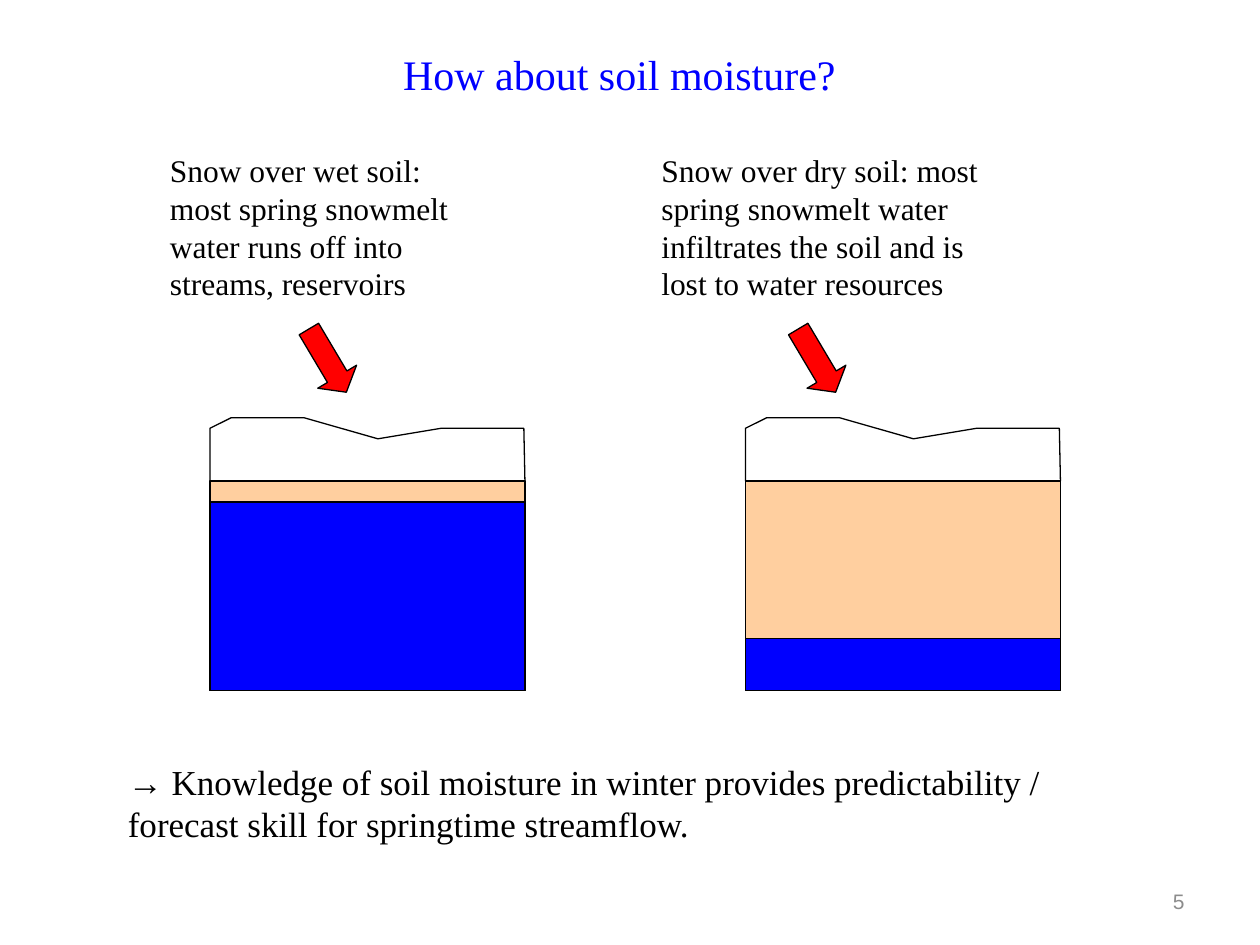
from pptx import Presentation
from pptx.dml.color import RGBColor
from pptx.enum.shapes import MSO_SHAPE
from pptx.enum.text import MSO_ANCHOR, PP_ALIGN
from pptx.util import Inches, Pt

BLACK = RGBColor(0x00, 0x00, 0x00)
WHITE = RGBColor(0xFF, 0xFF, 0xFF)
BLUE = RGBColor(0x00, 0x00, 0xFF)
RED = RGBColor(0xFF, 0x00, 0x00)
SAND = RGBColor(0xFF, 0xCF, 0x9F)
GRAY = RGBColor(0x8C, 0x8C, 0x8C)
RECTANGLE = MSO_SHAPE.RECTANGLE
RIGHT_ARROW = MSO_SHAPE.RIGHT_ARROW
LEFT, CENTER, RIGHT = PP_ALIGN.LEFT, PP_ALIGN.CENTER, PP_ALIGN.RIGHT
TOP, MIDDLE = MSO_ANCHOR.TOP, MSO_ANCHOR.MIDDLE

COLUMNS, ROWS = 120, 90
SOIL_TOP, SOIL_WIDTH, SOIL_HEIGHT = 45.8, 30, 20
SNOW_OUTLINE = [(0, 0), (30, 0), (29.9, -5), (22, -5), (16, -4),
                (9, -6), (2, -6), (0, -5)]
SOIL_CASES = [
    {"note": "Snow over wet soil: most spring snowmelt water runs off into "
             "streams, reservoirs",
     "note_left": 15, "note_width": 32, "arrow_left": 27.7,
     "soil_left": 20, "water_height": 18},
    {"note": "Snow over dry soil: most spring snowmelt water infiltrates "
             "the soil and is lost to water resources",
     "note_left": 61.8, "note_width": 35.2, "arrow_left": 74.3,
     "soil_left": 71, "water_height": 5},
]


class SlideBuilder:
    def __init__(self, deck, font="Times New Roman", line_width=0.75):
        self.column = deck.slide_width / COLUMNS
        self.row = deck.slide_height / ROWS
        self.font = font
        self.line_width = Pt(line_width)
        self.page = deck.slides.add_slide(deck.slide_layouts[6])

    def place(self, left, top, width, height):
        return (round(left * self.column), round(top * self.row),
                round(width * self.column), round(height * self.row))

    def paint(self, shape, fill):
        shape.shadow.inherit = False
        shape.fill.solid()
        shape.fill.fore_color.rgb = fill
        shape.line.color.rgb = BLACK
        shape.line.width = self.line_width

    def text(self, text, left, top, width, height, *, size=18, color=BLACK,
             font=None, align=LEFT, anchor=TOP):
        box = self.page.shapes.add_textbox(
            *self.place(left, top, width, height))
        frame = box.text_frame
        frame.word_wrap = True
        frame.vertical_anchor = anchor
        para = frame.paragraphs[0]
        para.alignment = align
        span = para.add_run()
        span.text = text
        span.font.name = font or self.font
        span.font.size = Pt(size)
        span.font.color.rgb = color

    def layer(self, left, top, width, height, fill):
        layer = self.page.shapes.add_shape(
            RECTANGLE, *self.place(left, top, width, height))
        self.paint(layer, fill)

    def arrow(self, left, top, width, height, rotation):
        arrow = self.page.shapes.add_shape(
            RIGHT_ARROW, *self.place(left, top, width, height))
        arrow.adjustments[0] = 0.5
        arrow.adjustments[1] = 0.4
        arrow.rotation = rotation
        self.paint(arrow, RED)

    def outline(self, left, base, offsets, fill):
        points = [self.place(left + across, base + down, 0, 0)[:2]
                  for across, down in offsets]
        builder = self.page.shapes.build_freeform(*points[0])
        builder.add_line_segments(points[1:], close=True)
        self.paint(builder.convert_to_shape(), fill)

    def soil_case(self, note, note_left, note_width, arrow_left, soil_left,
                  water_height):
        water_top = SOIL_TOP + SOIL_HEIGHT - water_height
        self.layer(soil_left, SOIL_TOP, SOIL_WIDTH, SOIL_HEIGHT, SAND)
        self.layer(soil_left, water_top, SOIL_WIDTH, water_height, BLUE)
        self.outline(soil_left, SOIL_TOP, SNOW_OUTLINE, WHITE)
        self.text(note, note_left, 13.8, note_width, 15.6)
        self.arrow(arrow_left, 32.2, 7, 4.3, 59.3)


def main():
    deck = Presentation()
    deck.slide_width = Inches(10)
    deck.slide_height = Inches(7.5)
    slide = SlideBuilder(deck)
    slide.text("How about soil moisture?", 17, 4, 84, 6,
               size=24, color=BLUE, align=CENTER)
    for case in SOIL_CASES:
        slide.soil_case(**case)
    slide.text("→ Knowledge of soil moisture in winter provides "
               "predictability / forecast skill for springtime streamflow.",
               11, 71.8, 95, 9.2, size=20)
    slide.text("5", 86, 83.4, 28, 4.8, size=12, color=GRAY, font="Arial",
               align=RIGHT, anchor=MIDDLE)
    deck.save("out.pptx")


if __name__ == "__main__":
    main()
